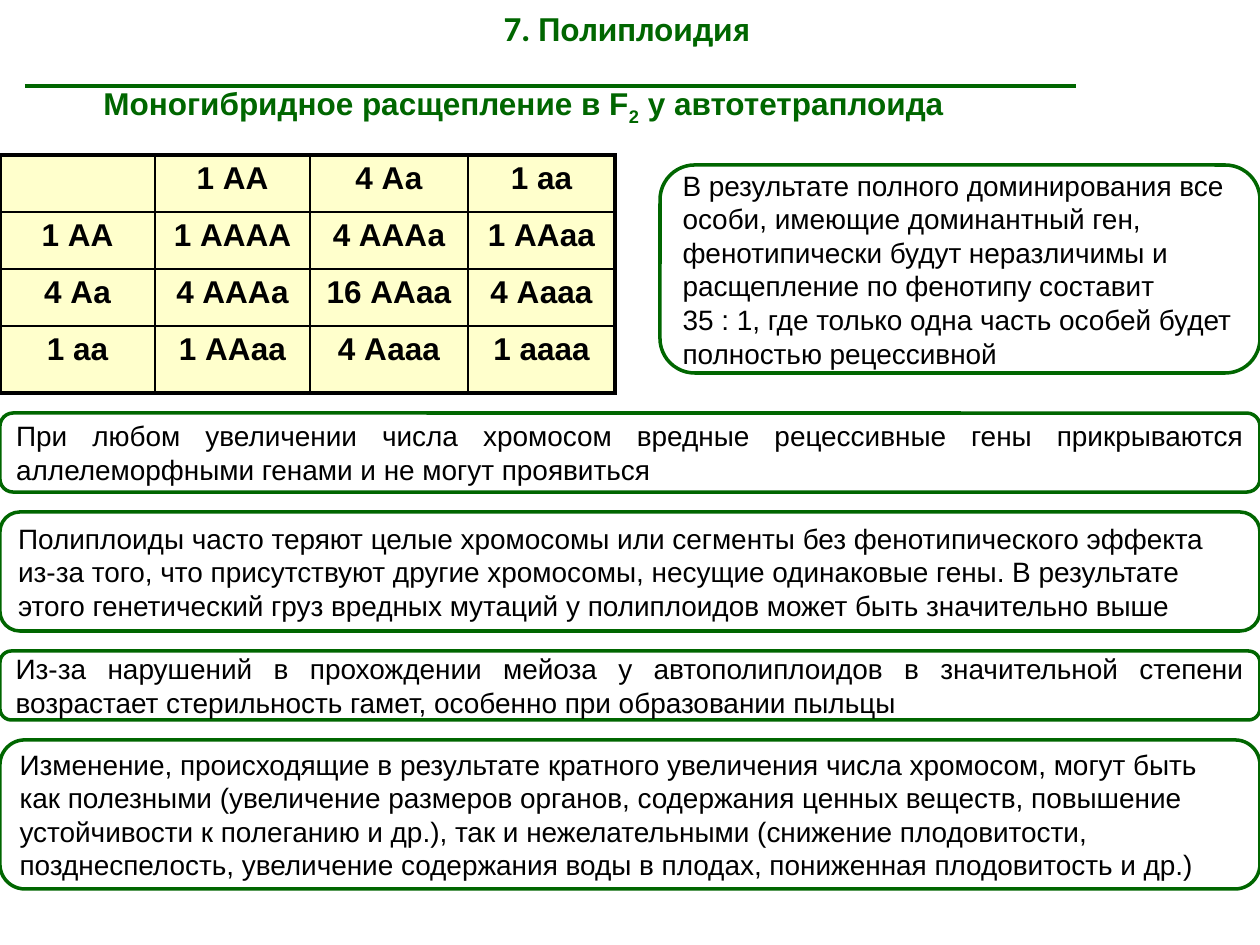
import pptx
import pptx.util
import pptx.dml.color
import pptx.enum.shapes
import pptx.enum.text
import pptx.oxml.ns
from lxml import etree
from dataclasses import dataclass

ALIGN = pptx.enum.text.PP_ALIGN
ANCHOR = pptx.enum.text.MSO_ANCHOR
SHAPES = pptx.enum.shapes

# Content: boxes are (left, top, width, height) in px
HEADING = "7. Полиплоидия"
HEADING_BOX = (60, 0, 1134, 68)
SUBTITLE = [("Моногибридное расщепление в F", False), ("2", True),
            (" у автотетраплоида", False)]
SUBTITLE_BOX = (0, 86, 1047, 39)
RULE = (25, 86, 1076, 86)

CROSSES = [
    ["", "1 АА", "4 Аа", "1 аа"],
    ["1 АА", "1 АААА", "4 АААа", "1 ААаа"],
    ["4 Аа", "4 АААа", "16 ААаа", "4 Аааа"],
    ["1 аа", "1 ААаа", "4 Аааа", "1 аааа"],
]
CROSSES_AT = (0, 155)
COLUMN_WIDTHS = [155, 155, 158, 147]
ROW_HEIGHTS = [57, 57, 57, 67]

# Notes: box, alignment, filled, paragraphs
NOTES = [
    ((660, 165, 600, 208), ALIGN.LEFT, False, [
        "В результате полного доминирования все особи, имеющие доминантный ген, "
        "фенотипически будут неразличимы и расщепление по фенотипу составит",
        "35 : 1, где только одна часть особей будет полностью рецессивной"]),
    ((0, 413, 1260, 79), ALIGN.JUSTIFY, False, [
        "При любом увеличении числа хромосом вредные рецессивные гены "
        "прикрываются аллелеморфными генами и не могут проявиться"]),
    ((0, 512, 1260, 119), ALIGN.LEFT, False, [
        "Полиплоиды часто теряют целые хромосомы или сегменты без "
        "фенотипического эффекта из-за того, что присутствуют другие хромосомы, "
        "несущие одинаковые гены. В результате этого генетический груз вредных "
        "мутаций у полиплоидов может быть значительно выше"]),
    ((0, 651, 1260, 69), ALIGN.JUSTIFY, False, [
        "Из-за нарушений в прохождении мейоза у автополиплоидов в значительной "
        "степени возрастает стерильность гамет, особенно при образовании пыльцы"]),
    ((0, 740, 1260, 149), ALIGN.LEFT, True, [
        "Изменение, происходящие в результате кратного увеличения числа хромосом, "
        "могут быть как полезными (увеличение размеров органов, содержания ценных "
        "веществ, повышение устойчивости к полеганию и др.), так и нежелательными "
        "(снижение плодовитости, позднеспелость, увеличение содержания воды в "
        "плодах, пониженная плодовитость и др.)"]),
]


@dataclass(frozen=True)
class Theme:
    green: str = "006600"
    ink: str = "000000"
    paper: str = "FFFFFF"
    cell: str = "FFFFCC"
    heading_font: str = "Calibri"
    body_font: str = "Arial"
    heading_size: int = 20
    strong_size: int = 18
    body_size: int = 16
    outline: float = 2
    outer_border: float = 2.25
    inner_border: float = 1


THEME = Theme()


def px(*lengths):
    return [pptx.util.Emu(round(length * 914400 / 126)) for length in lengths]


def rgb(colour):
    return pptx.dml.color.RGBColor.from_string(colour)


def style(paragraph, size, colour, font=THEME.body_font, bold=False, align=ALIGN.CENTER):
    paragraph.alignment = align
    paragraph.font.name = font
    paragraph.font.size = pptx.util.Pt(size)
    paragraph.font.bold = bold
    paragraph.font.color.rgb = rgb(colour)


def outline(line):
    line.color.rgb = rgb(THEME.green)
    line.width = pptx.util.Pt(THEME.outline)


def add_title(slide, box, runs, size, font, anchor):
    frame = slide.shapes.add_textbox(*px(*box)).text_frame
    frame.word_wrap = True
    frame.vertical_anchor = anchor
    paragraph = frame.paragraphs[0]
    style(paragraph, size, THEME.green, font, bold=True)
    for text, subscript in runs:
        run = paragraph.add_run()
        run.text = text
        if subscript:
            run.font._element.set("baseline", "-25000")


def add_rule(slide):
    rule = slide.shapes.add_connector(SHAPES.MSO_CONNECTOR.STRAIGHT, *px(*RULE))
    outline(rule.line)
    etree.SubElement(rule._element.spPr, pptx.oxml.ns.qn("a:effectLst"))


def set_borders(cell, widths):
    properties = cell._tc.get_or_add_tcPr()
    # Borders go before the fill, in the order left, right, top, bottom
    for position, (side, width) in enumerate(widths.items()):
        border = etree.Element(pptx.oxml.ns.qn(f"a:ln{side}"),
                               w=str(pptx.util.Pt(width)))
        fill = etree.SubElement(border, pptx.oxml.ns.qn("a:solidFill"))
        etree.SubElement(fill, pptx.oxml.ns.qn("a:srgbClr"), val=THEME.ink)
        properties.insert(position, border)


def add_crosses(slide):
    size = (sum(COLUMN_WIDTHS), sum(ROW_HEIGHTS))
    last_row, last_column = len(ROW_HEIGHTS) - 1, len(COLUMN_WIDTHS) - 1
    table = slide.shapes.add_table(len(ROW_HEIGHTS), len(COLUMN_WIDTHS),
                                   *px(*CROSSES_AT, *size)).table
    table.first_row = table.horz_banding = False
    for column, width in zip(table.columns, px(*COLUMN_WIDTHS)):
        column.width = width
    for row, height in zip(table.rows, px(*ROW_HEIGHTS)):
        row.height = height
    for r, genotypes in enumerate(CROSSES):
        for c, genotype in enumerate(genotypes):
            cell = table.cell(r, c)
            cell.text = genotype
            style(cell.text_frame.paragraphs[0], THEME.strong_size, THEME.ink, bold=True)
            cell.fill.solid()
            cell.fill.fore_color.rgb = rgb(THEME.cell)
            on_edge = {"L": c == 0, "R": c == last_column, "T": r == 0, "B": r == last_row}
            set_borders(cell, {side: THEME.outer_border if edge else THEME.inner_border
                               for side, edge in on_edge.items()})


def add_note(slide, box, align, filled, paragraphs):
    note = slide.shapes.add_shape(SHAPES.MSO_SHAPE.ROUNDED_RECTANGLE, *px(*box))
    note.shadow.inherit = False
    outline(note.line)
    if filled:
        note.fill.solid()
        note.fill.fore_color.rgb = rgb(THEME.paper)
    else:
        note.fill.background()
    frame = note.text_frame
    frame.word_wrap = True
    frame.vertical_anchor = ANCHOR.MIDDLE
    frame.text = "\n".join(paragraphs)
    for paragraph in frame.paragraphs:
        style(paragraph, THEME.body_size, THEME.ink, align=align)


def main():
    deck = pptx.Presentation()
    deck.slide_width, deck.slide_height = px(1260, 945)
    slide = deck.slides.add_slide(deck.slide_layouts[6])

    # Titles, table and rule
    add_title(slide, SUBTITLE_BOX, SUBTITLE, THEME.strong_size, THEME.body_font, ANCHOR.MIDDLE)
    add_crosses(slide)
    add_rule(slide)
    add_title(slide, HEADING_BOX, [(HEADING, False)], THEME.heading_size,
              THEME.heading_font, ANCHOR.TOP)

    # Outlined notes
    for note in NOTES:
        add_note(slide, *note)
    deck.save("out.pptx")


if __name__ == "__main__":
    main()
